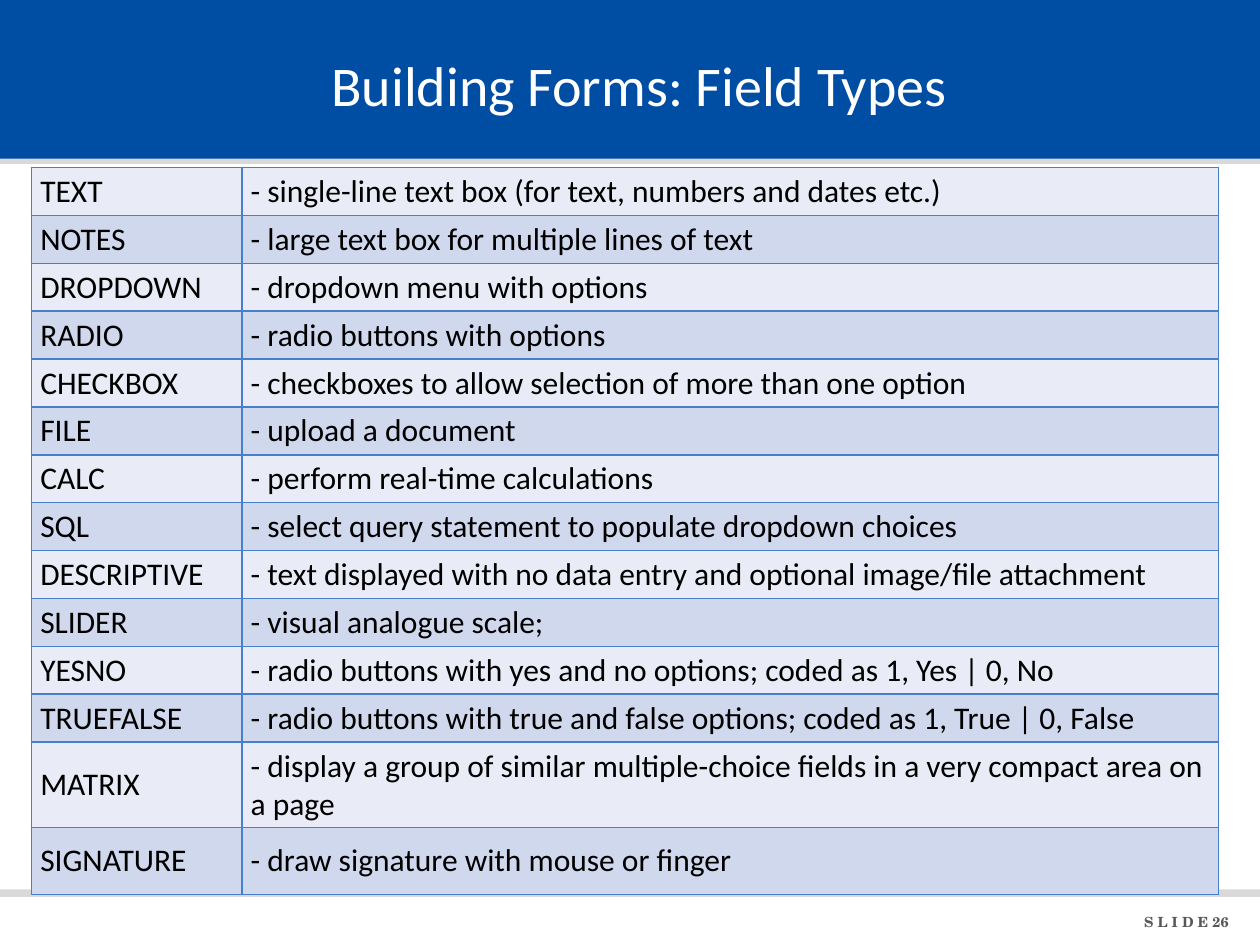
from lxml.etree import SubElement
from pptx import Presentation
from pptx.dml.color import RGBColor
from pptx.enum.shapes import MSO_SHAPE
from pptx.enum.text import MSO_ANCHOR, MSO_AUTO_SIZE, PP_ALIGN
from pptx.oxml.ns import qn
from pptx.util import Inches, Pt

TITLE = "Building Forms: Field Types"
SLIDE_LABEL = "S L I D E 26"
FIELD_TYPES = [
    ("TEXT", "- single-line text box (for text, numbers and dates etc.)"),
    ("NOTES", "- large text box for multiple lines of text"),
    ("DROPDOWN", "- dropdown menu with options"),
    ("RADIO", "- radio buttons with options"),
    ("CHECKBOX", "- checkboxes to allow selection of more than one option"),
    ("FILE", "- upload a document"),
    ("CALC", "- perform real-time calculations"),
    ("SQL", "- select query statement to populate dropdown choices"),
    ("DESCRIPTIVE", "- text displayed with no data entry and optional image/file attachment"),
    ("SLIDER", "- visual analogue scale;"),
    ("YESNO", "- radio buttons with yes and no options; coded as 1, Yes | 0, No"),
    ("TRUEFALSE", "- radio buttons with true and false options; coded as 1, True | 0, False"),
    ("MATRIX", "- display a group of similar multiple-choice fields in a very compact area on a page"),
    ("SIGNATURE", "- draw signature with mouse or finger"),
]
BANDS = [(1.05, 0.25, "DAD9D9"), (-0.01, 1.27, "004DA4"), (7.06, 0.06, "DAD9D9")]
COLUMN_WIDTHS = [1.67, 7.75]
ROW_HEIGHT = 0.37
TALL_ROWS = {"MATRIX": 0.66, "SIGNATURE": 0.53}
ROW_FILLS = ["E9ECF6", "CFD8EC"]
BORDER = "467FCC"


def color(value):
    return RGBColor.from_string(value)


def write(frame, text, size=18, font="Calibri", ink="000000", bold=False, align=PP_ALIGN.LEFT):
    para = frame.paragraphs[0]
    para.alignment = align
    span = para.add_run()
    span.text = text
    span.font.size = Pt(size)
    span.font.name = font
    span.font.bold = bold
    span.font.color.rgb = color(ink)


def add_borders(cell):
    properties = cell._tc.get_or_add_tcPr()
    for index, side in enumerate(["a:lnL", "a:lnR", "a:lnT", "a:lnB"]):
        line = properties.makeelement(qn(side), {"w": str(Pt(1))})
        fill = SubElement(line, qn("a:solidFill"))
        SubElement(fill, qn("a:srgbClr"), val=BORDER)
        properties.insert(index, line)


def add_band(page, top, height, fill):
    band = page.shapes.add_shape(
        MSO_SHAPE.RECTANGLE, 0, Inches(top), Inches(10), Inches(height))
    band.shadow.inherit = False
    band.fill.solid()
    band.fill.fore_color.rgb = color(fill)
    band.line.fill.background()
    return band


def add_label(page):
    box = page.shapes.add_textbox(Inches(8.43), Inches(7.2), Inches(1.42), Inches(0.23))
    box.text_frame.word_wrap = True
    box.text_frame.auto_size = MSO_AUTO_SIZE.SHAPE_TO_FIT_TEXT
    write(box.text_frame, SLIDE_LABEL, size=8, font="TeX Gyre Schola",
          ink="585858", bold=True, align=PP_ALIGN.RIGHT)


def add_title(page, below):
    title = page.shapes.title
    title.left, title.top = Inches(1), Inches(0.17)
    title.width, title.height = Inches(8.15), Inches(1)
    title.text_frame.vertical_anchor = MSO_ANCHOR.MIDDLE
    write(title.text_frame, TITLE, size=32, ink="FFFFFF", align=PP_ALIGN.CENTER)
    below.element.addnext(title.element)


def add_field_table(page):
    heights = [TALL_ROWS.get(name, ROW_HEIGHT) for name, _ in FIELD_TYPES]
    table = page.shapes.add_table(
        len(FIELD_TYPES), len(COLUMN_WIDTHS), Inches(0.25), Inches(1.33),
        Inches(sum(COLUMN_WIDTHS)), Inches(sum(heights))).table
    table.first_row = False
    for column, width in zip(table.columns, COLUMN_WIDTHS):
        column.width = Inches(width)
    for index, (row, height, texts) in enumerate(zip(table.rows, heights, FIELD_TYPES)):
        row.height = Inches(height)
        for cell, text in zip(row.cells, texts):
            cell.fill.solid()
            cell.fill.fore_color.rgb = color(ROW_FILLS[index % 2])
            cell.vertical_anchor = MSO_ANCHOR.MIDDLE
            cell.margin_left = cell.margin_right = Inches(0.07)
            cell.margin_top = cell.margin_bottom = Inches(0.04)
            write(cell.text_frame, text)
            add_borders(cell)


def main():
    deck = Presentation()
    deck.slide_width, deck.slide_height = Inches(10), Inches(7.5)
    page = deck.slides.add_slide(deck.slide_layouts[5])
    bands = [add_band(page, *band) for band in BANDS]
    add_label(page)
    add_title(page, bands[-1])
    add_field_table(page)
    deck.save("out.pptx")


if __name__ == "__main__":
    main()
